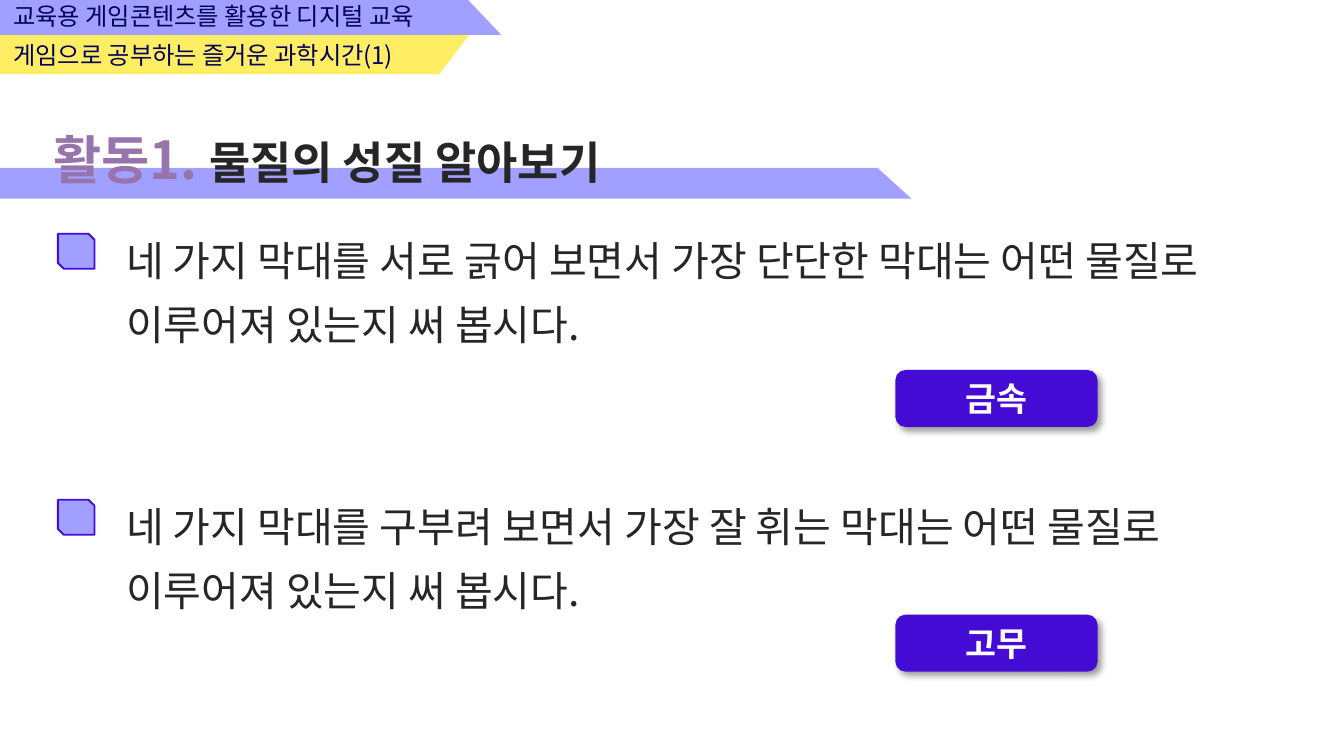
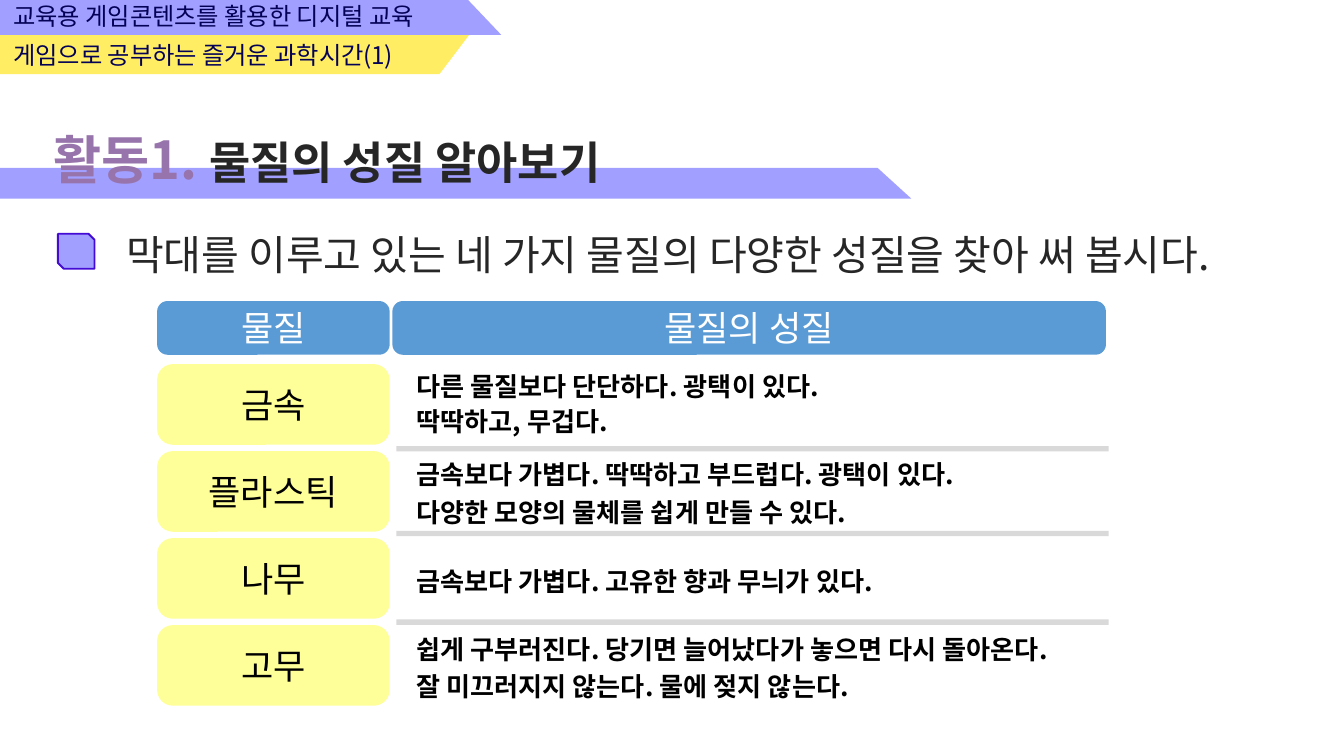
from dataclasses import dataclass
from typing import NamedTuple

from lxml import etree
from pptx import Presentation
from pptx import util as u
from pptx.dml.color import RGBColor
from pptx.enum import shapes, text
from pptx.oxml.ns import qn

Pt = u.Pt
Shape = shapes.MSO_SHAPE
Align = text.PP_ALIGN
Anchor = text.MSO_ANCHOR


@dataclass(frozen=True)
class Theme:
    font: str = "Noto Sans CJK KR"
    button_font: str = "Calibri"
    lilac: str = "A19FFF"
    lemon: str = "FFEE63"
    violet: str = "440BD4"
    mauve: str = "9774AB"
    navy: str = "040257"
    ink: str = "262626"
    black: str = "000000"
    white: str = "FFFFFF"
    table_head: str = "5B9BD5"
    table_label: str = "FFFF99"
    table_rule: str = "D9D9D9"
    band_size: float = 13
    number_size: float = 28
    title_size: float = 24
    question_size: float = 22
    answer_size: float = 18
    label_size: float = 18.8
    property_size: float = 14


THEME = Theme()


class Box(NamedTuple):
    left: float
    top: float
    width: float
    height: float


class Style(NamedTuple):
    size: float
    color: str
    bold: bool = False
    align: Align = Align.LEFT
    spacing: float | None = None
    font: str = THEME.font


class Band(NamedTuple):
    top: float
    bottom: float
    top_right: float
    bottom_right: float
    color: str


class Question(NamedTuple):
    wording: str
    marker_top: float
    box: Box
    answer: str = ""
    answer_top: float = 0


class Material(NamedTuple):
    name: str
    properties: list[str]
    text_top: float
    text_height: float
    rule_top: float | None
    spacing: float = 1.2


LABEL = Style(THEME.label_size, THEME.black, align=Align.CENTER)
HEADING = LABEL._replace(color=THEME.white)
ANSWER = Style(THEME.answer_size, THEME.white, True, Align.CENTER, font=THEME.button_font)
QUESTION = Style(THEME.question_size, THEME.ink, spacing=1.3)
PROPERTY = Style(THEME.property_size, THEME.black, True)
BAND_TEXT = Style(THEME.band_size, THEME.navy)

# Content
HEADER = [
    (Band(18.75, 39.75, 251.3, 235.4, THEME.lemon),
     Box(0, 18, 240, 23), "게임으로 공부하는 즐거운 과학시간(1)"),
    (Band(0, 18.75, 250.8, 268.6, THEME.lilac),
     Box(0, -2.9, 251, 23), "교육용 게임콘텐츠를 활용한 디지털 교육"),
]
TITLE_BAND = Band(90, 106.4, 470.2, 488.2, THEME.lilac)
TITLE_BOX = Box(21.6, 64.8, 476, 41)
ACTIVITY_NUMBER, ACTIVITY_TITLE = "활동1. ", "물질의 성질 알아보기"

STICK_QUESTIONS = [
    Question("네 가지 막대를 서로 긁어 보면서 가장 단단한 막대는 어떤 물질로 이루어져 있는지 써 봅시다.",
             125.3, Box(60.5, 115.9, 623.5, 73.4), "금속", 198.7),
    Question("네 가지 막대를 구부려 보면서 가장 잘 휘는 막대는 어떤 물질로 이루어져 있는지 써 봅시다.",
             267.8, Box(60.5, 258.5, 623.5, 73.4), "고무", 329.8),
]
TABLE_QUESTION = Question("막대를 이루고 있는 네 가지 물질의 다양한 성질을 찾아 써 봅시다.",
                          125.3, Box(60.5, 112.3, 623.5, 39.6))
MATERIALS = [
    Material("금속", ["다른 물질보다 단단하다. 광택이 있다.", "딱딱하고, 무겁다."],
             193, 44.6, 239, 1.1),
    Material("플라스틱", ["금속보다 가볍다. 딱딱하고 부드럽다. 광택이 있다.",
                      "다양한 모양의 물체를 쉽게 만들 수 있다."], 238.3, 48.2, 284.4),
    Material("나무", ["금속보다 가볍다. 고유한 향과 무늬가 있다."], 295.9, 27.4, 331.9),
    Material("고무", ["쉽게 구부러진다. 당기면 늘어났다가 놓으면 다시 돌아온다.",
                    "잘 미끄러지지 않는다. 물에 젖지 않는다."], 331.9, 48.2, None),
]

# Table geometry
LABEL_LEFT, LABEL_WIDTH = 84.2, 124.6
PROPERTY_LEFT, PROPERTY_WIDTH = 210.2, 382.3
HEAD_TOP, HEAD_HEIGHT = 161.3, 28.8
ROW_TOP, ROW_HEIGHT, ROW_PITCH = 195.1, 43.2, 46.6
CORNER = 0.195


def rgb(color: str) -> RGBColor:
    return RGBColor.from_string(color)


def paint(shape, fill: str, line: str | None = None) -> None:
    shape.shadow.inherit = False
    shape.fill.solid()
    shape.fill.fore_color.rgb = rgb(fill)
    if line:
        shape.line.color.rgb = rgb(line)
        shape.line.width = Pt(1)
    else:
        shape.line.fill.background()


def style_paragraph(paragraph, style: Style) -> None:
    paragraph.alignment = style.align
    if style.spacing:
        paragraph.line_spacing = style.spacing
    font = paragraph.font
    font.name, font.size, font.bold = style.font, Pt(style.size), style.bold
    font.color.rgb = rgb(style.color)
    east_asian = etree.SubElement(font._element, qn("a:ea"))
    east_asian.set("typeface", THEME.font)


def write(shape, lines: list[str], style: Style, anchor: Anchor) -> None:
    frame = shape.text_frame
    frame.word_wrap = True
    frame.vertical_anchor = anchor
    for index, line in enumerate(lines):
        paragraph = frame.add_paragraph() if index else frame.paragraphs[0]
        paragraph.add_run().text = line
        style_paragraph(paragraph, style)


def add_text(slide, box: Box, lines: list[str], style: Style, anchor: Anchor = Anchor.TOP):
    textbox = slide.shapes.add_textbox(*map(Pt, box))
    write(textbox, lines, style, anchor)
    textbox.text_frame.auto_size = text.MSO_AUTO_SIZE.SHAPE_TO_FIT_TEXT
    return textbox


def add_block(slide, kind: Shape, box: Box, fill: str, line: str | None = None,
              corner: float | None = None):
    block = slide.shapes.add_shape(kind, *map(Pt, box))
    paint(block, fill, line)
    if corner is not None:
        block.adjustments[0] = corner
    return block


def add_band(slide, band: Band) -> None:
    builder = slide.shapes.build_freeform(0, Pt(band.top))
    builder.add_line_segments([
        (Pt(band.top_right), Pt(band.top)),
        (Pt(band.bottom_right), Pt(band.bottom)),
        (0, Pt(band.bottom)),
    ])
    paint(builder.convert_to_shape(), band.color)


def add_drop_shadow(shape) -> None:
    effects = shape._element.spPr.find(qn("a:effectLst"))
    shadow = etree.SubElement(effects, qn("a:outerShdw"), blurRad=str(Pt(4)), dist=str(Pt(3)),
                              dir="2700000", algn="tl", rotWithShape="0")
    color = etree.SubElement(shadow, qn("a:srgbClr"), val=THEME.black)
    etree.SubElement(color, qn("a:alpha"), val="40000")


def add_header(slide) -> None:
    for band, box, wording in HEADER:
        add_band(slide, band)
        add_text(slide, box, [wording], BAND_TEXT)
    add_band(slide, TITLE_BAND)
    title = add_text(slide, TITLE_BOX, [ACTIVITY_NUMBER],
                     Style(THEME.number_size, THEME.mauve, True))
    name = title.text_frame.paragraphs[0].add_run()
    name.text = ACTIVITY_TITLE
    name.font.size = Pt(THEME.title_size)
    name.font.color.rgb = rgb(THEME.ink)


def add_question(slide, question: Question) -> None:
    add_text(slide, question.box, [question.wording], QUESTION, Anchor.MIDDLE)
    add_block(slide, Shape.SNIP_2_DIAG_RECTANGLE, Box(31, question.marker_top, 19.6, 18.7),
              THEME.lilac, THEME.violet)
    if question.answer:
        button = add_block(slide, Shape.ROUNDED_RECTANGLE,
                           Box(480.2, question.answer_top, 107.3, 29.5),
                           THEME.violet, THEME.violet)
        add_drop_shadow(button)
        write(button, [question.answer], ANSWER, Anchor.MIDDLE)


def add_cell(slide, box: Box, wording: str, fill: str, style: Style) -> None:
    cell = add_block(slide, Shape.ROUNDED_RECTANGLE, box, fill, corner=CORNER)
    write(cell, [wording], style, Anchor.MIDDLE)


def add_material(slide, row: int, material: Material) -> None:
    add_cell(slide, Box(LABEL_LEFT, ROW_TOP + row * ROW_PITCH, LABEL_WIDTH, ROW_HEIGHT),
             material.name, THEME.table_label, LABEL)
    if material.rule_top is not None:
        add_block(slide, Shape.ROUNDED_RECTANGLE, Box(212.4, material.rule_top, 381.6, 2.9),
                  THEME.table_rule, corner=0.03)
    add_text(slide, Box(216, material.text_top, 381.6, material.text_height),
             material.properties, PROPERTY._replace(spacing=material.spacing), Anchor.MIDDLE)


def main() -> None:
    deck = Presentation()
    deck.slide_width, deck.slide_height = Pt(720), Pt(405)
    blank = deck.slide_layouts[6]

    # Questions about the sticks
    sticks = deck.slides.add_slide(blank)
    add_header(sticks)
    for question in STICK_QUESTIONS:
        add_question(sticks, question)

    # Properties of each material
    properties = deck.slides.add_slide(blank)
    add_header(properties)
    add_question(properties, TABLE_QUESTION)
    for left, width, heading in ((LABEL_LEFT, LABEL_WIDTH, "물질"),
                                 (PROPERTY_LEFT, PROPERTY_WIDTH, "물질의 성질")):
        add_cell(properties, Box(left, HEAD_TOP, width, HEAD_HEIGHT), heading,
                 THEME.table_head, HEADING)
    for row, material in enumerate(MATERIALS):
        add_material(properties, row, material)

    deck.save("out.pptx")


if __name__ == "__main__":
    main()
